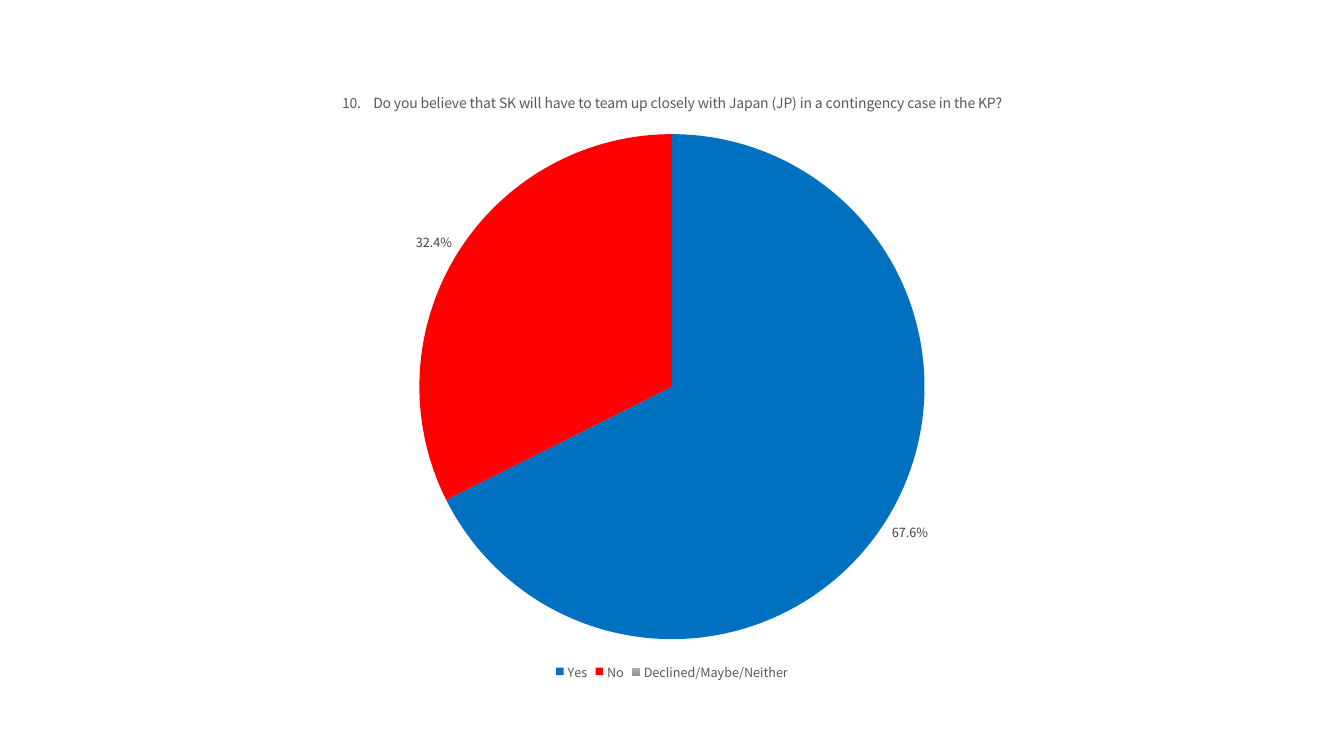
from copy import deepcopy
from dataclasses import dataclass

from pptx import Presentation, oxml
from pptx.chart import data
from pptx.dml.color import RGBColor
from pptx.enum import chart as kinds
from pptx.oxml import ns
from pptx.util import Inches, Pt


@dataclass(frozen=True)
class Theme:
    font: str = "Noto Sans CJK KR"
    title_size: int = 10
    small_size: int = 9
    black: str = "000000"
    text: str = "595959"
    label: str = "404040"
    yes: str = "0070C0"
    no: str = "FF0000"
    declined: tuple = ("AFAFAF", "A5A5A5", "939393")


THEME = Theme()
QUESTION = (
    "10.    Do you believe that SK will have to team up closely "
    "with Japan (JP) in a contingency case in the KP?"
)
ANSWERS = {"Yes": 0.676, "No": 0.324, "Declined/Maybe/Neither": 0}


def style_font(font, size, color):
    font.name = THEME.font
    font.size = Pt(size)
    font.bold = False
    font.color.rgb = RGBColor.from_string(color)


def add_pie(page, question, answers):
    chart_data = data.CategoryChartData(number_format="0.0%")
    chart_data.categories = list(answers)
    chart_data.add_series(question, list(answers.values()))
    chart = page.shapes.add_chart(
        kinds.XL_CHART_TYPE.PIE,
        Inches(0.7), Inches(0.7), Inches(11.93), Inches(6.09),
        chart_data,
    ).chart
    style_font(chart.font, THEME.title_size, THEME.black)
    chart.plots[0].vary_by_categories = True
    return chart


def add_title(chart, title):
    chart.has_title = True
    para = chart.chart_title.text_frame.paragraphs[0]
    span = para.add_run()
    span.text = title
    style_font(span.font, THEME.title_size, THEME.text)
    chart.chart_title.include_in_layout = False


def add_legend(chart):
    chart.has_legend = True
    chart.legend.position = kinds.XL_LEGEND_POSITION.BOTTOM
    chart.legend.include_in_layout = False
    style_font(chart.legend.font, THEME.small_size, THEME.text)


def fill_gradient(point, colors):
    fill = point.format.fill
    fill.gradient()
    fill.gradient_angle = 270
    stop_list = point.format._element.xpath(".//a:gsLst")[0]
    stop_list.insert(1, deepcopy(stop_list[0]))
    for index, (stop, color) in enumerate(zip(fill.gradient_stops, colors)):
        stop.position = index / (len(colors) - 1)
        stop.color.rgb = RGBColor.from_string(color)


def fill_slices(series):
    for index, color in enumerate((THEME.yes, THEME.no)):
        fill = series.points[index].format.fill
        fill.solid()
        fill.fore_color.rgb = RGBColor.from_string(color)
    declined = series.points[2]
    stop_parent = declined.format
    stop_parent.fill.gradient()
    stop_list = series._element.xpath(".//a:gsLst")[0]
    stop_list.insert(1, deepcopy(stop_list[0]))
    fill = declined.format.fill
    fill.gradient_angle = 270
    for index, (stop, color) in enumerate(zip(fill.gradient_stops, THEME.declined)):
        stop.position = index / 2
        stop.color.rgb = RGBColor.from_string(color)


def add_labels(series, hidden):
    labels = series.data_labels
    labels.show_value = True
    labels.show_percentage = False
    labels.number_format = "0.0%"
    labels.number_format_is_linked = False
    labels.position = kinds.XL_LABEL_POSITION.OUTSIDE_END
    style_font(labels.font, THEME.small_size, THEME.label)
    labels._element.insert(0, oxml.parse_xml(
        f'<c:dLbl {ns.nsdecls("c")}><c:idx val="{hidden}"/><c:delete val="1"/></c:dLbl>'
    ))


def place_plot(chart, **place):
    plot_area = chart._chartSpace.xpath(".//c:plotArea")[0]
    for layout in plot_area.xpath("./c:layout"):
        plot_area.remove(layout)
    sizes = "".join(f'<c:{key} val="{value}"/>' for key, value in place.items())
    plot_area.insert(0, oxml.parse_xml(
        f'<c:layout {ns.nsdecls("c")}><c:manualLayout><c:layoutTarget val="inner"/>'
        f'<c:xMode val="edge"/><c:yMode val="edge"/>{sizes}</c:manualLayout></c:layout>'
    ))


def main():
    deck = Presentation()
    deck.slide_width, deck.slide_height = Inches(13.33), Inches(7.5)
    page = deck.slides.add_slide(deck.slide_layouts[6])
    chart = add_pie(page, QUESTION, ANSWERS)
    add_title(chart, QUESTION)
    add_legend(chart)
    series = chart.plots[0].series[0]
    fill_slices(series)
    add_labels(series, hidden=2)
    place_plot(chart, x=0.29, y=0.1, w=0.42, h=0.83)
    deck.save("out.pptx")


if __name__ == "__main__":
    main()
